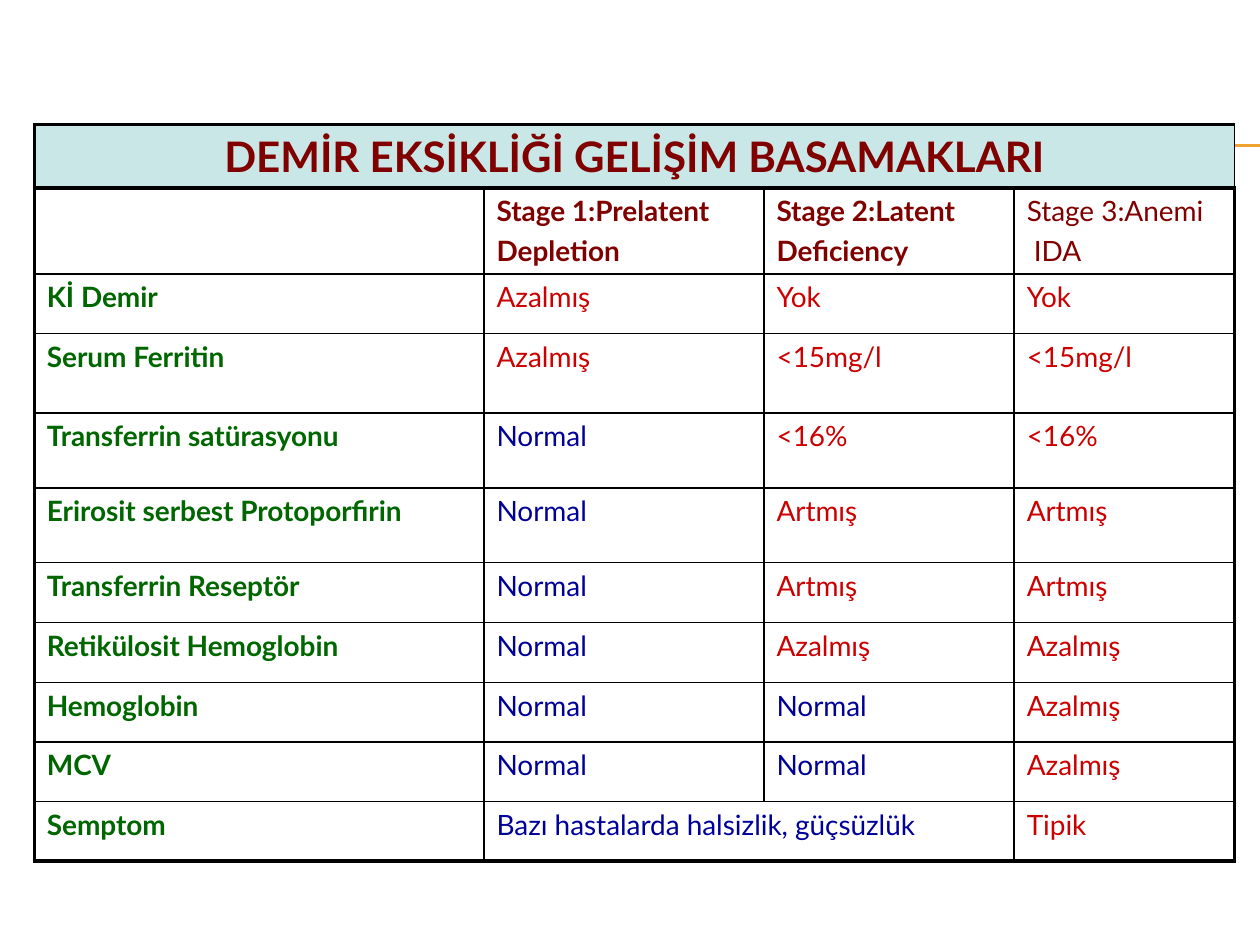
from lxml import etree
from pptx import Presentation
from pptx.dml.color import RGBColor
from pptx.enum.shapes import MSO_CONNECTOR
from pptx.enum.text import PP_ALIGN
from pptx.oxml.ns import qn
from pptx.util import Pt

STRAIGHT = MSO_CONNECTOR.STRAIGHT
LEFT, CENTER = PP_ALIGN.LEFT, PP_ALIGN.CENTER

MAROON, GREEN, RED, BLUE = "800000", "006600", "CC0000", "000099"
BLACK, PALE_TEAL, ORANGE = "000000", "CAE7E8", "F0A22E"
THIN, THICK = 1, 2.25

COLUMN_WIDTHS = [257, 160, 143, 126]
ROW_HEIGHTS = [36, 48.6, 34, 45.4, 42.8, 42.8, 34.2, 34.2, 34.2, 34, 34]
TITLE = "DEMİR EKSİKLİĞİ GELİŞİM BASAMAKLARI"
STAGES = ["Stage 1:Prelatent\nDepletion", "Stage 2:Latent\nDeficiency", "Stage 3:Anemi\n IDA"]
SYMPTOM = "Bazı hastalarda halsizlik, güçsüzlük"
FINDINGS = [
    ["Kİ Demir", "Azalmış", "Yok", "Yok"],
    ["Serum Ferritin", "Azalmış", "<15mg/l", "<15mg/l"],
    ["Transferrin satürasyonu", "Normal", "<16%", "<16%"],
    ["Erirosit serbest Protoporfirin", "Normal", "Artmış", "Artmış"],
    ["Transferrin Reseptör", "Normal", "Artmış", "Artmış"],
    ["Retikülosit Hemoglobin", "Normal", "Azalmış", "Azalmış"],
    ["Hemoglobin", "Normal", "Normal", "Azalmış"],
    ["MCV", "Normal", "Normal", "Azalmış"],
    ["Semptom", SYMPTOM, "", "Tipik"],
]


def color(value):
    """Turn a hex string into a colour."""
    return RGBColor.from_string(value)


def write_cell(cell, text, text_color, bold=False, size=16, alignment=LEFT):
    """Write one paragraph per line of text into a table cell."""
    cell.text_frame.text = text
    font_format = {"name": "Lato", "size": Pt(size), "bold": bold}
    for paragraph in cell.text_frame.paragraphs:
        paragraph.alignment = alignment
        paragraph.space_before = Pt(size * 0.24)
        for attribute, value in font_format.items():
            setattr(paragraph.font, attribute, value)
        for run in paragraph.runs:
            for attribute, value in font_format.items():
                setattr(run.font, attribute, value)
            run.font.color.rgb = color(text_color)


def border_cell(cell, row, column):
    """Draw thick edges around the table and its title row, thin ones elsewhere."""
    thick_edges = {
        "a:lnL": column == 0,
        "a:lnR": column == len(COLUMN_WIDTHS) - 1,
        "a:lnT": row <= 1,
        "a:lnB": row in (0, len(ROW_HEIGHTS) - 1),
    }
    properties = cell._tc.get_or_add_tcPr()
    for tag, thick in thick_edges.items():
        width = str(Pt(THICK if thick else THIN))
        edge = etree.SubElement(properties, qn(tag), w=width)
        fill = etree.SubElement(edge, qn("a:solidFill"))
        etree.SubElement(fill, qn("a:srgbClr"), val=BLACK)


def add_rules(slide, left, top, width, gap):
    """Draw the pair of fine orange rules behind the table."""
    for y in (top, top + gap):
        rule = slide.shapes.add_connector(STRAIGHT, Pt(left), Pt(y), Pt(left + width), Pt(y))
        rule.line.color.rgb = color(ORANGE)
        rule.line.width = Pt(0.75)
        etree.SubElement(rule._element.spPr, qn("a:effectLst"))


def add_stage_table(slide, left, top):
    """Add the table of findings for each stage of iron deficiency."""
    rows, columns = len(ROW_HEIGHTS), len(COLUMN_WIDTHS)
    table = slide.shapes.add_table(
        rows, columns, Pt(left), Pt(top), Pt(sum(COLUMN_WIDTHS)), Pt(sum(ROW_HEIGHTS))
    ).table
    for attribute in ("first_row", "horz_banding"):
        setattr(table, attribute, False)
    for column, width in zip(table.columns, COLUMN_WIDTHS):
        column.width = Pt(width)
    for row, height in zip(table.rows, ROW_HEIGHTS):
        row.height = Pt(height)

    for row in range(rows):
        for column in range(columns):
            cell = table.cell(row, column)
            border_cell(cell, row, column)
            if row == 0:
                cell.fill.solid()
                cell.fill.fore_color.rgb = color(PALE_TEAL)
            else:
                cell.fill.background()

    table.cell(0, 0).merge(table.cell(0, columns - 1))
    table.cell(rows - 1, 1).merge(table.cell(rows - 1, 2))
    write_cell(table.cell(0, 0), TITLE, MAROON, bold=True, size=24, alignment=CENTER)
    for column, stage in enumerate(STAGES, start=1):
        write_cell(table.cell(1, column), stage, MAROON, bold=column < 3)
    for row, (label, *values) in enumerate(FINDINGS, start=2):
        write_cell(table.cell(row, 0), label, GREEN, bold=True)
        for column, value in enumerate(values, start=1):
            if value:
                value_color = BLUE if value in ("Normal", SYMPTOM) else RED
                write_cell(table.cell(row, column), value, value_color)


def main():
    """Build and save the slide."""
    presentation = Presentation()
    presentation.slide_width, presentation.slide_height = Pt(720), Pt(540)
    slide = presentation.slides.add_slide(presentation.slide_layouts[6])
    add_rules(slide, left=40.3, top=82.8, width=679.7, gap=0.7)
    add_stage_table(slide, left=19.6, top=71.3)
    presentation.save("out.pptx")


if __name__ == "__main__":
    main()
